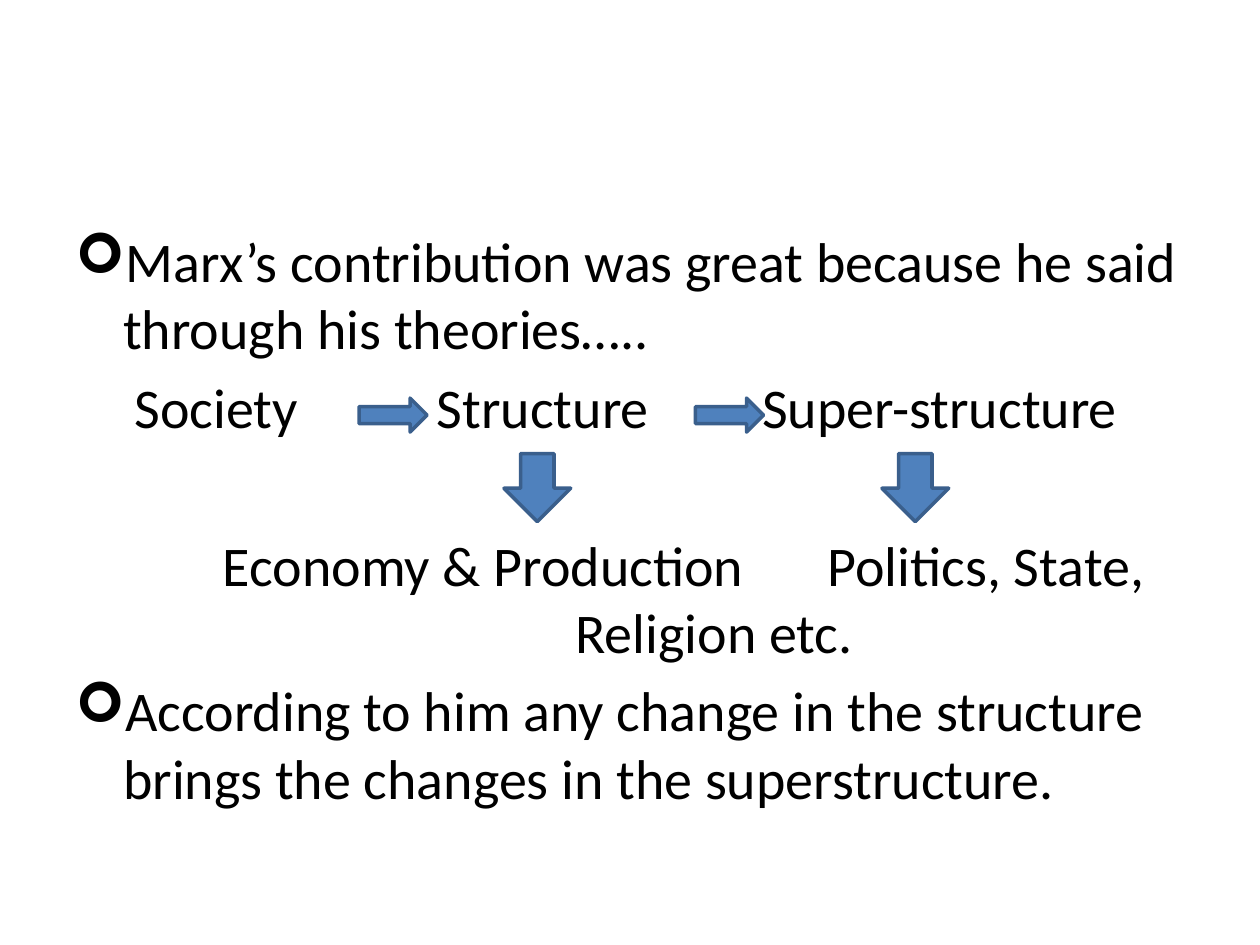
import pptx
import pptx.util
import pptx.dml.color
import pptx.enum.shapes
import lxml.etree

WIDTH, HEIGHT = 10, 7.5
FONT, SIZE = "Calibri", 32
GAP = 0.2 * SIZE  # space before each paragraph, in points
SKIPPED_LINE = 1.22 * SIZE + GAP  # room for the down arrows
HANGING = 0.38
TEXT, ARROW_FILL, ARROW_LINE = "000000", "4F81BD", "3A5F8C"


def colour(value):
    return pptx.dml.color.RGBColor.from_string(value)


def add_child(parent, tag, **attributes):
    name = pptx.oxml.ns.qn(tag)
    return lxml.etree.SubElement(parent, name, attributes)


def add_paragraph(frame, lines, space=GAP):
    """Add a paragraph; its lines are parted by line breaks."""
    first = frame.paragraphs[0]
    para = frame.add_paragraph() if first.runs else first
    para.space_before = pptx.util.Pt(space)
    for number, line in enumerate(lines):
        if number:
            para.add_line_break()
        span = para.add_run()
        span.text = line
        span.font.name = FONT
        span.font.size = pptx.util.Pt(SIZE)
        span.font.color.rgb = colour(TEXT)
    return para


def add_bullet(frame, text):
    properties = add_paragraph(frame, [text])._p.get_or_add_pPr()
    indent = pptx.util.Inches(HANGING)
    properties.set("marL", str(indent))
    properties.set("indent", str(-indent))
    add_child(properties, "a:buFont", typeface="Wingdings")
    add_child(properties, "a:buChar", char="➢")


def add_tabbed(frame, lines, stops, space=GAP):
    """Add lines whose words stand at tab stops, in inches."""
    properties = add_paragraph(frame, lines, space)._p.get_or_add_pPr()
    tabs = add_child(properties, "a:tabLst")
    for stop in stops:
        add_child(tabs, "a:tab", pos=str(pptx.util.Inches(stop)), algn="l")


def add_arrow(page, kind, left, top, width, height):
    lengths = [pptx.util.Inches(n) for n in (left, top, width, height)]
    arrow = page.shapes.add_shape(kind, *lengths)
    arrow.shadow.inherit = False
    arrow.fill.solid()
    arrow.fill.fore_color.rgb = colour(ARROW_FILL)
    arrow.line.color.rgb = colour(ARROW_LINE)
    arrow.line.width = pptx.util.Pt(2)


def main():
    deck = pptx.Presentation()
    deck.slide_width = pptx.util.Inches(WIDTH)
    deck.slide_height = pptx.util.Inches(HEIGHT)
    page = deck.slides.add_slide(deck.slide_layouts[6])

    # Body text
    box = page.shapes.add_textbox(
        int(deck.slide_width * 0.05), pptx.util.Inches(1.75),
        int(deck.slide_width * 0.9), int(deck.slide_height * 0.66))
    frame = box.text_frame
    frame.word_wrap = True
    add_bullet(frame, "Marx’s contribution was great because he said "
                      "through his theories…..")
    add_tabbed(frame, ["\tSociety\tStructure\tSuper-structure"],
               [0.47, 2.87, 5.45])
    add_tabbed(frame, ["\tEconomy & Production\tPolitics, State,",
                       "\t\tReligion etc."],
               [1.17, 3.97, 5.97], GAP + SKIPPED_LINE)
    add_bullet(frame, "According to him any change in the structure "
                      "brings the changes in the superstructure.")

    # Arrows along the chain, then down to the examples
    shapes = pptx.enum.shapes.MSO_SHAPE
    for left in (2.85, 5.52):
        add_arrow(page, shapes.RIGHT_ARROW, left, 3.16, 0.54, 0.27)
    for left in (4, 7):
        add_arrow(page, shapes.DOWN_ARROW, left, 3.6, 0.53, 0.54)

    deck.save("out.pptx")


if __name__ == "__main__":
    main()
